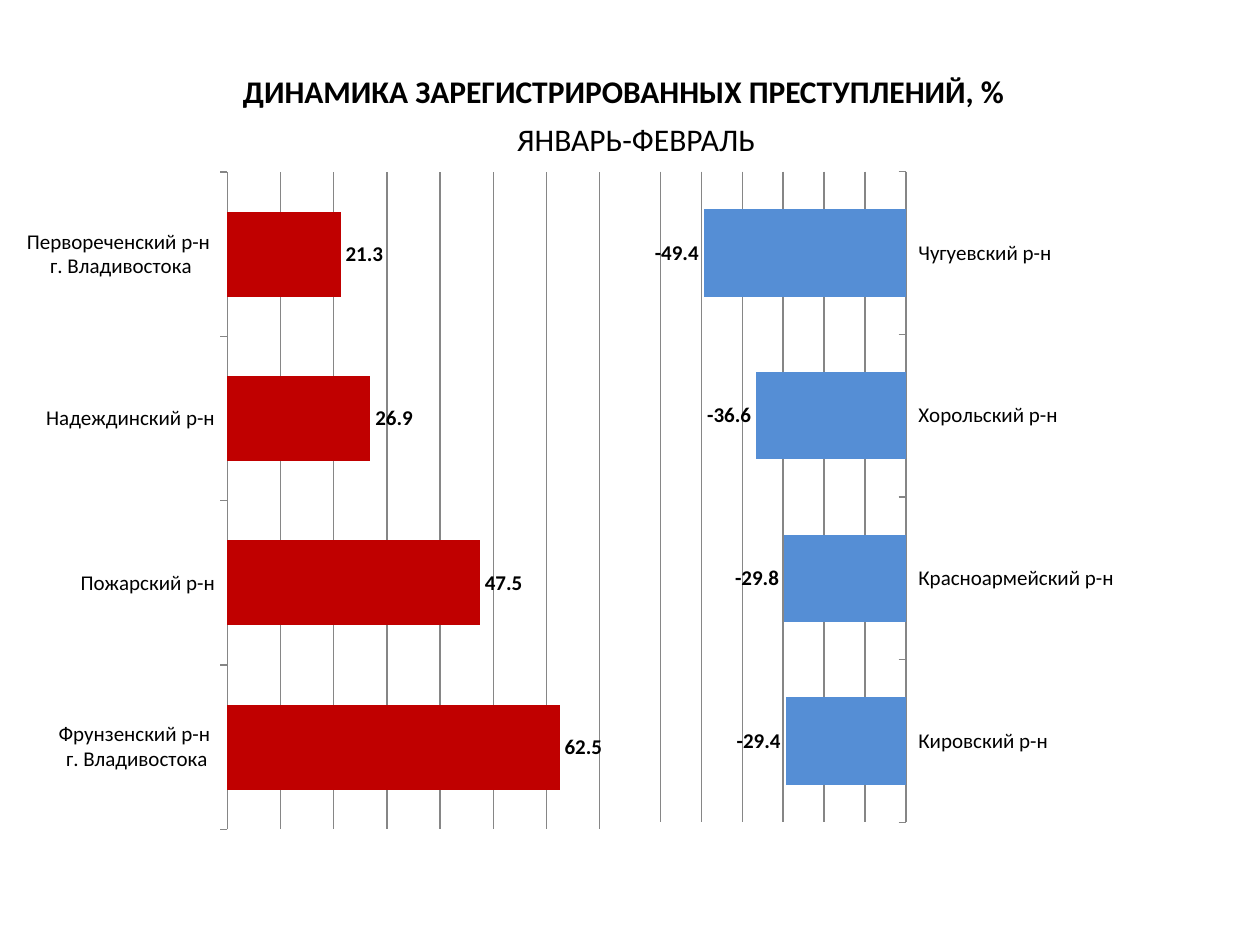
from lxml.etree import SubElement
from pptx import Presentation
from pptx.chart.data import CategoryChartData
from pptx.dml.color import RGBColor
from pptx.enum.chart import XL_CHART_TYPE, XL_LABEL_POSITION, XL_TICK_LABEL_POSITION, XL_TICK_MARK
from pptx.enum.text import MSO_ANCHOR, MSO_AUTO_SIZE, PP_ALIGN
from pptx.oxml.ns import qn
from pptx.util import Inches, Pt

WIDE, HIGH = Inches(10), Inches(7.5)
FONT = "Calibri"
COLORS = {"text": "000000", "rise": "C00000", "fall": "558ED5", "grid": "868686"}

RISE = {
    "Фрунзенский р-н \nг. Владивостока": 62.5,
    "Пожарский р-н": 47.5,
    "Надеждинский р-н": 26.9,
    "Первореченский р-н \nг. Владивостока": 21.3,
}
FALL = {
    "Кировский р-н": -29.4,
    "Красноармейский р-н": -29.8,
    "Хорольский р-н": -36.6,
    "Чугуевский р-н": -49.4,
}


def color(name):
    return RGBColor.from_string(COLORS[name])


def area(x, y, w, h):
    """Turn shares of the slide into lengths."""
    return int(x * WIDE), int(y * HIGH), int(w * WIDE), int(h * HIGH)


def style(font, size, bold=False):
    font.name, font.size, font.bold = FONT, Pt(size), bold
    font.color.rgb = color("text")


def put_line(shape, box, text, bold=False):
    """Place one centred line of heading text."""
    shape.left, shape.top, shape.width, shape.height = area(*box)
    frame = shape.text_frame
    frame.text = text
    frame.word_wrap = False
    frame.auto_size = MSO_AUTO_SIZE.SHAPE_TO_FIT_TEXT
    frame.vertical_anchor = MSO_ANCHOR.TOP
    line = frame.paragraphs[0]
    line.alignment = PP_ALIGN.CENTER
    style(line.runs[0].font, 18, bold)


def set_plot(chart, shares):
    """Fix the inner plot area as shares of the chart."""
    plot = chart._chartSpace.chart.plotArea
    for old in plot.findall(qn("c:layout")):
        plot.remove(old)
    layout = SubElement(plot, qn("c:layout"))
    plot.insert(0, layout)
    manual = SubElement(layout, qn("c:manualLayout"))
    parts = [("layoutTarget", "inner"), ("xMode", "edge"), ("yMode", "edge")]
    parts += zip("xywh", shares)
    for tag, val in parts:
        SubElement(manual, qn("c:" + tag)).set("val", str(val))


def add_bars(slide, box, data, fill, plot, span, gap, form, side):
    """Add a bar chart with a hidden value axis."""
    source = CategoryChartData(number_format=form)
    source.categories = list(data)
    source.add_series("Series 1", list(data.values()))
    chart = slide.shapes.add_chart(
        XL_CHART_TYPE.BAR_CLUSTERED, *area(*box), source).chart
    chart.has_legend = chart.has_title = False
    style(chart.font, 18)
    set_plot(chart, plot)

    # Axes and grid
    names, scale = chart.category_axis, chart.value_axis
    names.tick_label_position = side
    names.major_tick_mark = XL_TICK_MARK.OUTSIDE
    style(names.tick_labels.font, 12)
    scale.visible = False
    scale.minimum_scale, scale.maximum_scale = span
    scale.major_unit = 10
    scale.has_major_gridlines = True
    for line in (names.format.line, scale.major_gridlines.format.line):
        line.color.rgb = color("grid")
        line.width = Pt(0.75)

    # Bars and their values
    bars = chart.plots[0]
    bars.gap_width, bars.vary_by_categories = gap, False
    series = bars.series[0]
    series.invert_if_negative = False
    series.format.fill.solid()
    series.format.fill.fore_color.rgb = color(fill)
    labels = series.data_labels
    labels.show_value = True
    labels.position = XL_LABEL_POSITION.OUTSIDE_END
    labels.number_format, labels.number_format_is_linked = form, False
    style(labels.font, 12, True)
    return bars


def main():
    deck = Presentation()
    deck.slide_width, deck.slide_height = WIDE, HIGH
    slide = deck.slides.add_slide(deck.slide_layouts[5])

    # Headings
    put_line(slide.shapes.title, (0.18, 0.07, 0.63, 0.05),
             "ДИНАМИКА ЗАРЕГИСТРИРОВАННЫХ ПРЕСТУПЛЕНИЙ, %", True)
    period = slide.shapes.add_textbox(0, 0, 0, 0)
    put_line(period, (0.4, 0.12, 0.21, 0.05), "ЯНВАРЬ-ФЕВРАЛЬ")

    # Falling districts on the right, rising ones on the left
    add_bars(slide, (0.484, 0.16, 0.5, 0.725), FALL, "fall",
             (0.08, 0.03, 0.39, 0.95), (-60, 0), 86, "General",
             XL_TICK_LABEL_POSITION.HIGH)
    rise = add_bars(slide, (0, 0.16, 0.547, 0.74), RISE, "rise",
                    (0.33, 0.03, 0.54, 0.94), (0, 70), 93, "0.0",
                    XL_TICK_LABEL_POSITION.NEXT_TO_AXIS)
    rise.overlap = -49

    deck.save("out.pptx")


if __name__ == "__main__":
    main()
